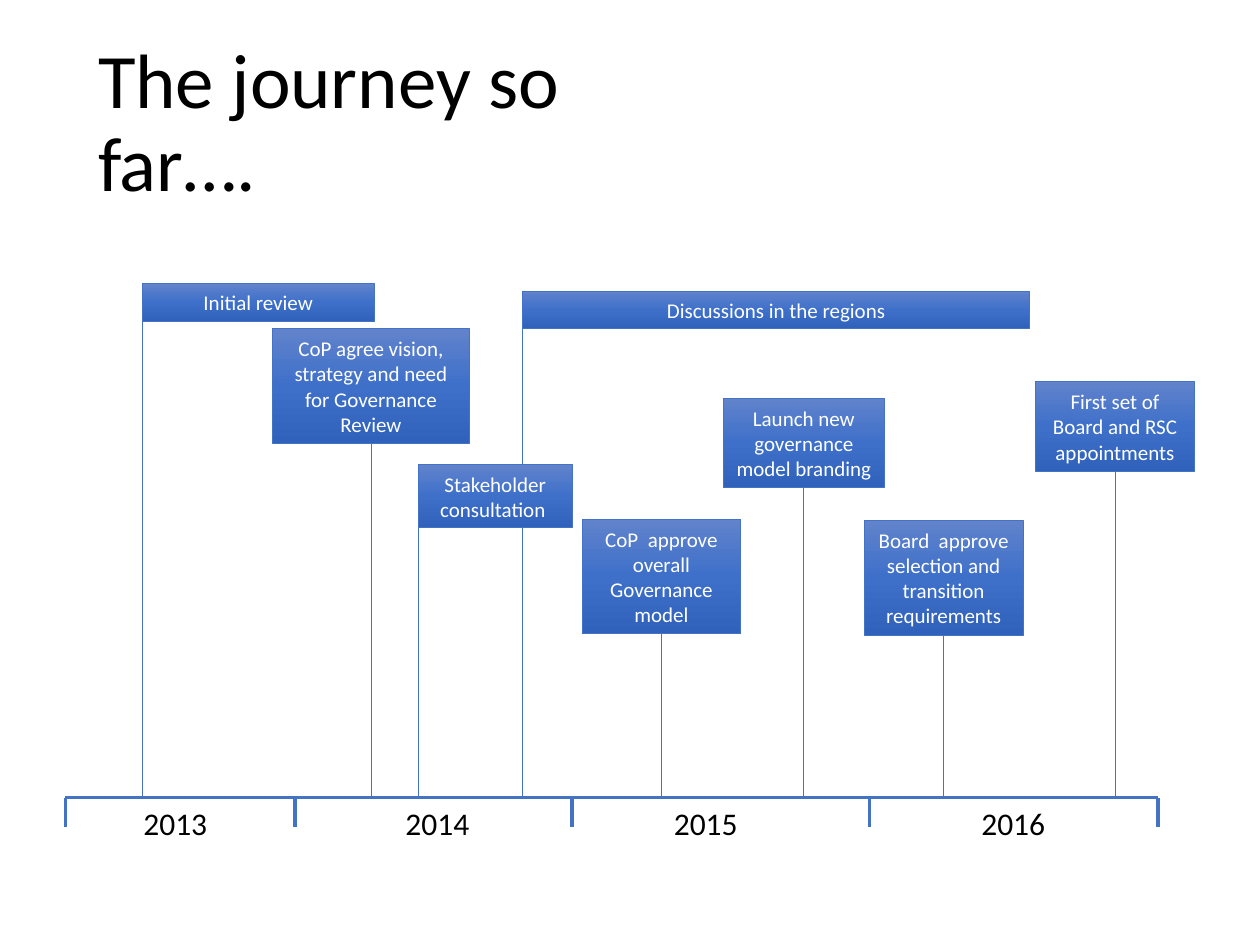
import copy
import lxml.etree
import pptx
import pptx.dml.color
import pptx.enum.shapes
import pptx.enum.text
import pptx.oxml.ns
import pptx.util

TITLE = "The journey so far…."
BLUE = "4472C4"
GRADIENT = [(0, "6183CB"), (0.5, "3E70CA"), (1, "3062BB")]
AXIS_TOP = 6.33
TICK_HEIGHT = 0.23
TICKS = [0.52, 2.34, 4.54, 6.9, 9.19]
YEARS = [("2013", 1.04), ("2014", 3.12), ("2015", 5.25), ("2016", 7.69)]
ROW_HEIGHTS = {1: 0.3, 2: 0.5, 3: 0.71, 4: 0.91}
LEFT_SIDE, BOTTOM_SIDE, LEFT_CORNER = 1, 2, None
MILESTONES = [
    ("Discussions in the regions", 4.15, 2.31, 4.02, 1, LEFT_SIDE),
    ("Initial review", 1.13, 2.25, 1.84, 1, LEFT_SIDE),
    ("CoP agree vision, strategy and need for Governance Review", 2.16, 2.61, 1.57, 4, BOTTOM_SIDE),
    ("Stakeholder consultation ", 3.32, 3.69, 1.22, 2, LEFT_CORNER),
    ("CoP  approve overall Governance model", 4.62, 4.12, 1.26, 4, BOTTOM_SIDE),
    ("Launch new governance model branding", 5.74, 3.16, 1.28, 3, BOTTOM_SIDE),
    ("Board  approve selection and transition requirements", 6.86, 4.13, 1.26, 4, BOTTOM_SIDE),
    ("First set of Board and RSC appointments", 8.22, 3.03, 1.26, 3, BOTTOM_SIDE),
]

inches = pptx.util.Inches
MIDDLE = pptx.enum.text.MSO_ANCHOR.MIDDLE
CENTER = pptx.enum.text.PP_ALIGN.CENTER


def color(value):
    return pptx.dml.color.RGBColor.from_string(value)


def write(shape, text, size, text_color="000000", frame_format=None, paragraph_format=None):
    frame = shape.text_frame
    paragraph = frame.paragraphs[0]
    run = paragraph.add_run()
    run.text = text
    formats = [
        (frame, {"word_wrap": True, **(frame_format or {})}),
        (paragraph, paragraph_format or {}),
        (run.font, {"name": "Calibri", "size": pptx.util.Pt(size)}),
    ]
    for target, values in formats:
        for name, value in values.items():
            setattr(target, name, value)
    run.font.color.rgb = color(text_color)


def add_text(slide, text, box, size, **formats):
    shape = slide.shapes.add_textbox(*map(inches, box))
    write(shape, text, size, **formats)


def add_line(slide, x1, y1, x2, y2, width):
    line = slide.shapes.add_connector(
        pptx.enum.shapes.MSO_CONNECTOR.STRAIGHT, *map(inches, (x1, y1, x2, y2)))
    line.line.color.rgb = color(BLUE)
    line.line.width = pptx.util.Pt(width)
    lxml.etree.SubElement(line._element.spPr, pptx.oxml.ns.qn("a:effectLst"))
    return line


def fill_gradient(shape):
    shape.fill.gradient()
    shape.fill.gradient_angle = 270
    stop_list = shape._element.spPr.find(".//" + pptx.oxml.ns.qn("a:gsLst"))
    stop_list.append(copy.deepcopy(stop_list[0]))
    for stop, (position, value) in zip(shape.fill.gradient_stops, GRADIENT):
        stop.position = position
        stop.color.rgb = color(value)


def add_milestone(slide, text, left, top, width, rows, side):
    height = ROW_HEIGHTS[rows]
    shape = slide.shapes.add_shape(
        pptx.enum.shapes.MSO_SHAPE.RECTANGLE, *map(inches, (left, top, width, height)))
    shape.shadow.inherit = False
    fill_gradient(shape)
    shape.line.color.rgb = color(BLUE)
    shape.line.width = pptx.util.Pt(0.5)
    write(shape, text, 12, "FFFFFF", {"vertical_anchor": MIDDLE}, {"alignment": CENTER})
    x = left + width / 2 if side == BOTTOM_SIDE else left
    stem = add_line(slide, x, top + height, x, AXIS_TOP - 0.01, 0.5)
    if side is not LEFT_CORNER:
        stem.begin_connect(shape, side)


def main():
    presentation = pptx.Presentation()
    presentation.slide_width, presentation.slide_height = inches(10), inches(7.5)
    slide = presentation.slides.add_slide(presentation.slide_layouts[6])
    add_text(slide, TITLE, (0.68, 0.61, 5.24, 0.77), 44,
             frame_format={"vertical_anchor": MIDDLE, "margin_right": inches(0.4)},
             paragraph_format={"line_spacing": 0.9})
    add_line(slide, TICKS[0], AXIS_TOP, TICKS[-1], AXIS_TOP, 2)
    for x in TICKS:
        add_line(slide, x, AXIS_TOP, x, AXIS_TOP + TICK_HEIGHT, 2)
    for year, left in YEARS:
        add_text(slide, year, (left, AXIS_TOP, 0.87, 0.4), 18)
    for milestone in MILESTONES:
        add_milestone(slide, *milestone)
    presentation.save("out.pptx")


if __name__ == "__main__":
    main()
